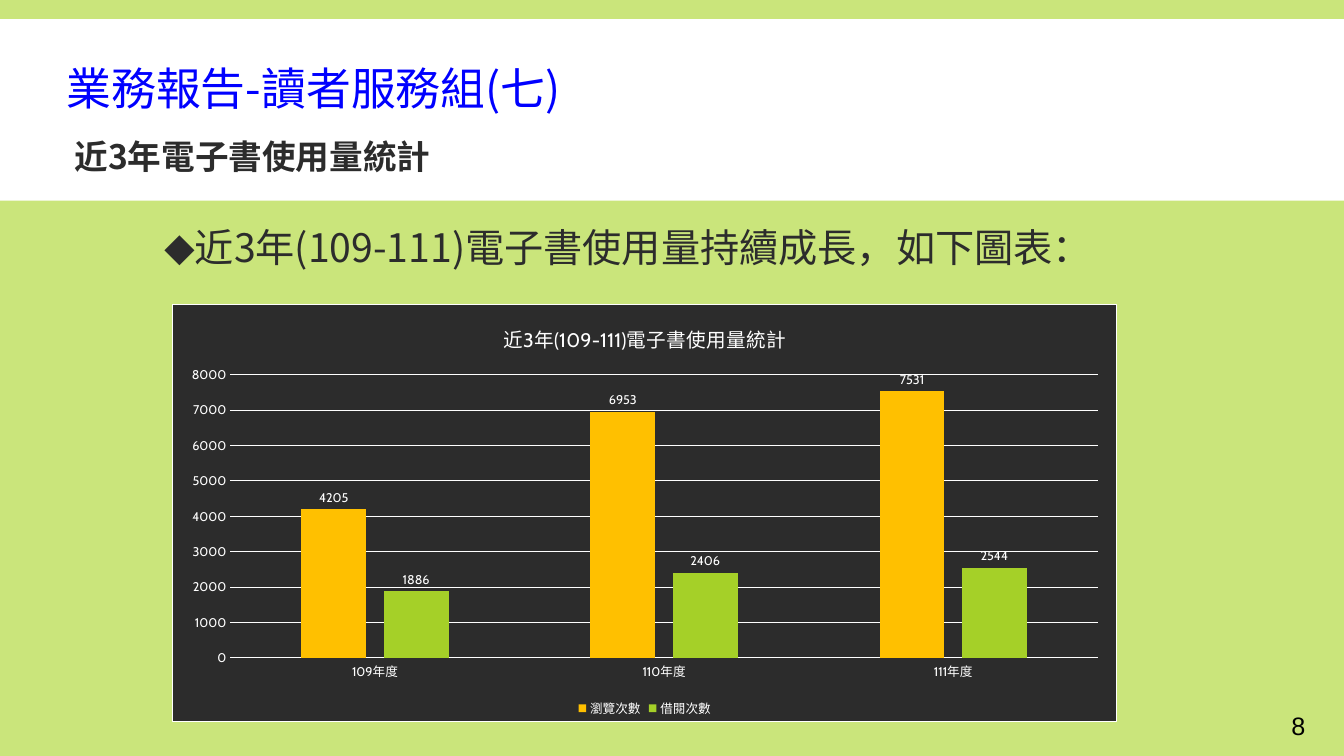
"""Build the slide on three years of e-book usage."""
from dataclasses import dataclass

from lxml import etree
from pptx import Presentation
from pptx import util as u
from pptx.chart import data as cd
from pptx.dml.color import RGBColor
from pptx.enum import chart as ch, shapes, text
from pptx.oxml import ns, parse_xml

LIME = RGBColor(0xCA, 0xE5, 0x7B)
WHITE = RGBColor(0xFF, 0xFF, 0xFF)
DARK = RGBColor(0x2C, 0x2C, 0x2C)
BLUE = RGBColor(0x00, 0x00, 0xFF)
BLACK = RGBColor(0x00, 0x00, 0x00)
GOLD = RGBColor(0xFF, 0xC0, 0x00)
GREEN = RGBColor(0xA5, 0xD0, 0x28)
SANS = "Noto Sans CJK SC"
CABIN = "Cabin"
MID = text.MSO_ANCHOR.MIDDLE


@dataclass
class Label:
    """A text box whose runs differ only in size."""
    box: tuple[float, float, float, float]
    runs: list[tuple[str, int]]
    color: RGBColor
    face: str = SANS
    bold: bool = False
    anchor: text.MSO_ANCHOR = text.MSO_ANCHOR.TOP
    line: float = 1.0
    before: int = 0
    after: int = 0
    wrap: bool = True


@dataclass
class Bars:
    """One series of columns."""
    name: str
    values: tuple[int, ...]
    color: RGBColor


LABELS = [
    Label((0.64, 1.15, 11.32, 0.85), [("近3年電子書使用量統計", 24)], DARK,
          bold=True, anchor=MID, line=0.85),
    Label((0.56, 0.54, 10.52, 0.74), [("業務報告-讀者服務組(七)", 32)], BLUE,
          anchor=MID, line=0.85),
    Label((1.53, 2.22, 11.38, 4.6),
          [("◆", 22), ("近3年(109-111)電子書使用量持續成長，如下圖表：", 28)],
          DARK, line=0.9, before=12, after=2),
    Label((12.71, 7, 0.46, 0.4), [("8", 18)], BLACK, face="Arial", wrap=False),
]
YEARS = ["109年度", "110年度", "111年度"]
SERIES = [
    Bars("瀏覽次數", (4205, 6953, 7531), GOLD),
    Bars("借閱次數", (1886, 2406, 2544), GREEN),
]


def style(font, size: int, color: RGBColor, face: str) -> None:
    """Set the size, colour and face of a font."""
    font.size = u.Pt(size)
    font.color.rgb = color
    font.name = face
    font.bold = False


def rule(line) -> None:
    """Make a line thin and white."""
    line.color.rgb = WHITE
    line.width = u.Pt(0.75)


def write(slide, label: Label) -> None:
    """Draw one text box."""
    frame = slide.shapes.add_textbox(*map(u.Inches, label.box)).text_frame
    frame.word_wrap = label.wrap
    frame.vertical_anchor = label.anchor
    if not label.wrap:
        frame.auto_size = text.MSO_AUTO_SIZE.SHAPE_TO_FIT_TEXT
    para = frame.paragraphs[0]
    para.line_spacing = label.line
    para.space_before = u.Pt(label.before)
    para.space_after = u.Pt(label.after)
    style(para.font, label.runs[0][1], label.color, label.face)
    para.font.bold = label.bold
    base = para._p.pPr.find(ns.qn("a:defRPr"))
    etree.SubElement(base, ns.qn("a:ea"), typeface=label.face)
    for words, size in label.runs:
        run = para.add_run()
        run.text = words
        if len(label.runs) > 1:
            run.font.size = u.Pt(size)


def panel(chart) -> None:
    """Give the chart a dark ground and a white border."""
    chart._chartSpace.find(ns.qn("c:chart")).addnext(parse_xml(
        f'<c:spPr {ns.nsdecls("c", "a")}>'
        f'<a:solidFill><a:srgbClr val="{DARK}"/></a:solidFill>'
        f'<a:ln w="{u.Pt(0.75)}"><a:solidFill><a:srgbClr val="{WHITE}"/>'
        '</a:solidFill></a:ln></c:spPr>'))


def plot(slide) -> None:
    """Draw the column chart."""
    data = cd.CategoryChartData()
    data.categories = YEARS
    for bars in SERIES:
        data.add_series(bars.name, bars.values)
    box = map(u.Inches, (1.71, 3.02, 9.37, 4.14))
    chart = slide.shapes.add_chart(
        ch.XL_CHART_TYPE.COLUMN_CLUSTERED, *box, data).chart
    style(chart.font, 10, BLACK, "Arial")
    panel(chart)

    title = chart.chart_title
    title.include_in_layout = False
    title.text_frame.text = "近3年(109-111)電子書使用量統計"
    style(title.text_frame.paragraphs[0].font, 14, WHITE, CABIN)

    chart.has_legend = True
    chart.legend.position = ch.XL_LEGEND_POSITION.BOTTOM
    chart.legend.include_in_layout = False
    style(chart.legend.font, 9, WHITE, CABIN)

    for axis in (chart.category_axis, chart.value_axis):
        axis.major_tick_mark = ch.XL_TICK_MARK.NONE
        axis.minor_tick_mark = ch.XL_TICK_MARK.NONE
        style(axis.tick_labels.font, 9, WHITE, CABIN)
    rule(chart.category_axis.format.line)
    rule(chart.value_axis.major_gridlines.format.line)
    chart.value_axis.format.line.fill.background()

    group = chart.plots[0]
    group.gap_width = 219
    group.overlap = -27
    group.vary_by_categories = False
    for item, bars in zip(group.series, SERIES):
        item.format.fill.solid()
        item.format.fill.fore_color.rgb = bars.color
        marks = item.data_labels
        marks.show_value = True
        marks.position = ch.XL_LABEL_POSITION.OUTSIDE_END
        style(marks.font, 9, WHITE, CABIN)


def main() -> None:
    """Build and save the slide."""
    deck = Presentation()
    deck.slide_width = u.Inches(13.33)
    deck.slide_height = u.Inches(7.5)
    slide = deck.slides.add_slide(deck.slide_layouts[6])
    slide.background.fill.solid()
    slide.background.fill.fore_color.rgb = LIME
    band = slide.shapes.add_shape(
        shapes.MSO_SHAPE.RECTANGLE, *map(u.Inches, (0, 0.19, 13.33, 1.8)))
    band.shadow.inherit = False
    band.fill.solid()
    band.fill.fore_color.rgb = WHITE
    band.line.fill.background()
    *heads, page = LABELS
    for label in heads:
        write(slide, label)
    plot(slide)
    write(slide, page)
    deck.save("out.pptx")


if __name__ == "__main__":
    main()
